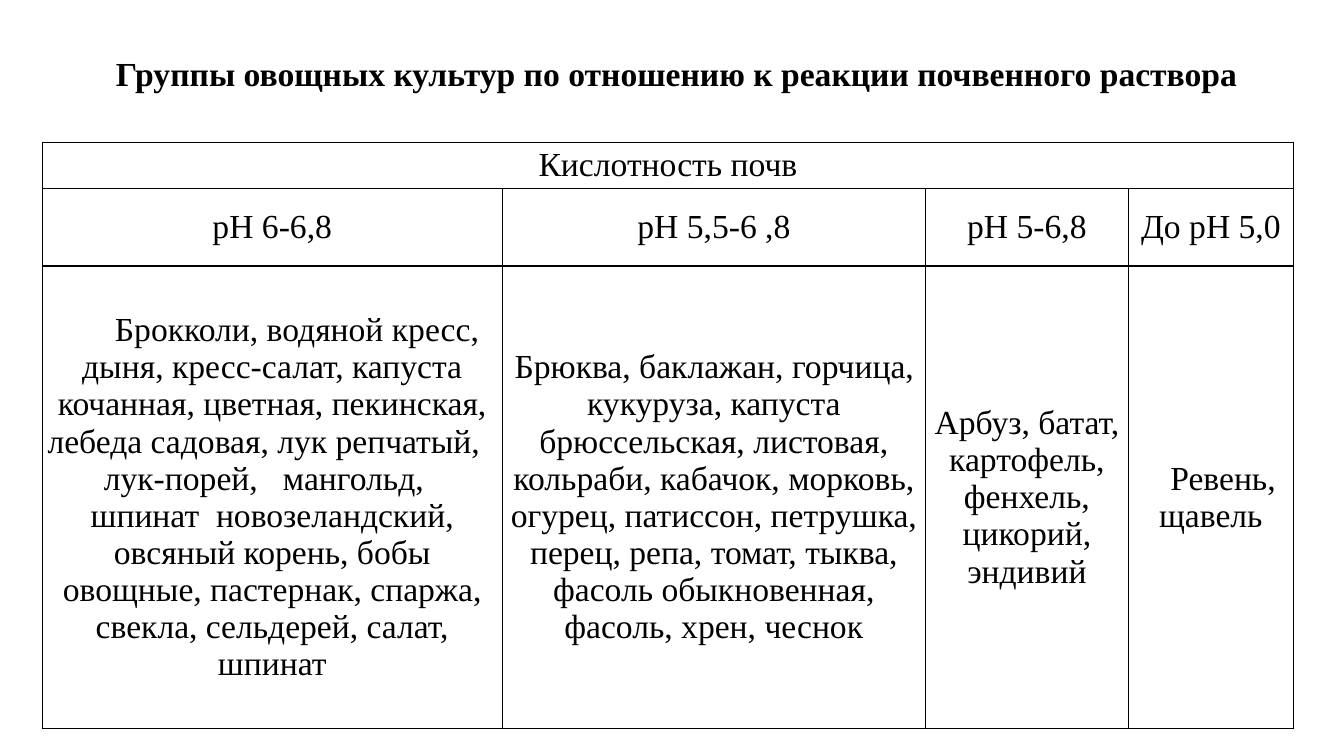
import pptx
import pptx.util
import pptx.dml.color
import pptx.enum.text
import pptx.oxml
import pptx.oxml.ns

PX = 9144
FONT = "Times New Roman"
COLORS = {"ink": "000000", "paper": "FFFFFF"}
WIDTHS = [456, 420, 201, 164]
HEIGHTS = [46, 77, 459]
HEAD = "Кислотность почв"
LEVELS = ["рН 6-6,8", "рН 5,5-6 ,8", "рН 5-6,8", "До рН 5,0"]
CROPS = [
    "Брокколи, водяной кресс, дыня, кресс-салат, капуста кочанная, цветная, "
    "пекинская, лебеда садовая, лук репчатый,   лук-порей,   мангольд,   "
    "шпинат  новозеландский, овсяный корень, бобы овощные, пастернак, спаржа, "
    "свекла, сельдерей, салат, шпинат",
    "Брюква, баклажан, горчица, кукуруза, капуста брюссельская, листовая, "
    "кольраби, кабачок, морковь, огурец, патиссон, петрушка, перец, репа, "
    "томат, тыква, фасоль обыкновенная, фасоль, хрен, чеснок",
    "Арбуз, батат, картофель, фенхель, цикорий, эндивий",
    "Ревень, щавель",
]
INDENTS = [49, 1, 0, 24]


def px(n):
    return pptx.util.Emu(n * PX)


def color(name):
    return pptx.dml.color.RGBColor.from_string(COLORS[name])


def style(para, bold=False):
    para.alignment = pptx.enum.text.PP_ALIGN.CENTER
    para.font.name = FONT
    para.font.size = pptx.util.Pt(24)
    para.font.bold = bold
    para.font.color.rgb = color("ink")


def add_title(slide, text):
    title = slide.shapes.title
    title.left, title.top = px(28), px(40)
    title.width, title.height = px(1286), px(71)
    frame = title.text_frame
    frame.text = text
    frame.word_wrap = True
    frame.auto_size = pptx.enum.text.MSO_AUTO_SIZE.NONE
    frame.vertical_anchor = pptx.enum.text.MSO_ANCHOR.MIDDLE
    style(frame.paragraphs[0], bold=True)
    frame.paragraphs[0].line_spacing = 0.9


def add_border(cell):
    props = cell._tc.get_or_add_tcPr()
    for pos, side in enumerate(["lnL", "lnR", "lnT", "lnB"]):
        line = pptx.oxml.parse_xml(
            f'<a:{side} {pptx.oxml.ns.nsdecls("a")} w="12700"><a:solidFill>'
            f'<a:srgbClr val="{COLORS["ink"]}"/></a:solidFill></a:{side}>'
        )
        props.insert(pos, line)


def fill_cell(cell, text, indent):
    cell.text = text
    cell.vertical_anchor = pptx.enum.text.MSO_ANCHOR.MIDDLE
    cell.margin_left = cell.margin_right = px(3)
    cell.margin_top = cell.margin_bottom = 0
    cell.fill.solid()
    cell.fill.fore_color.rgb = color("paper")
    para = cell.text_frame.paragraphs[0]
    style(para)
    if indent:
        para._p.get_or_add_pPr().set("indent", str(px(indent)))
    add_border(cell)


def add_grid(slide):
    frame = slide.shapes.add_table(
        len(HEIGHTS), len(WIDTHS), px(42), px(141), px(sum(WIDTHS)), px(sum(HEIGHTS))
    )
    table = frame.table
    table.first_row = table.horz_banding = False
    for col, width in zip(table.columns, WIDTHS):
        col.width = px(width)
    for row, height in zip(table.rows, HEIGHTS):
        row.height = px(height)
    table.cell(0, 0).merge(table.cell(0, len(WIDTHS) - 1))
    texts = [[HEAD, "", "", ""], LEVELS, CROPS]
    for r, line in enumerate(texts):
        for c, text in enumerate(line):
            fill_cell(table.cell(r, c), text, INDENTS[c] if r == 2 else 0)


def main():
    deck = pptx.Presentation()
    deck.slide_width, deck.slide_height = px(1333), px(750)
    slide = deck.slides.add_slide(deck.slide_layouts[5])
    add_title(slide, "Группы овощных культур по отношению к реакции почвенного раствора")
    add_grid(slide)
    deck.save("out.pptx")


if __name__ == "__main__":
    main()
